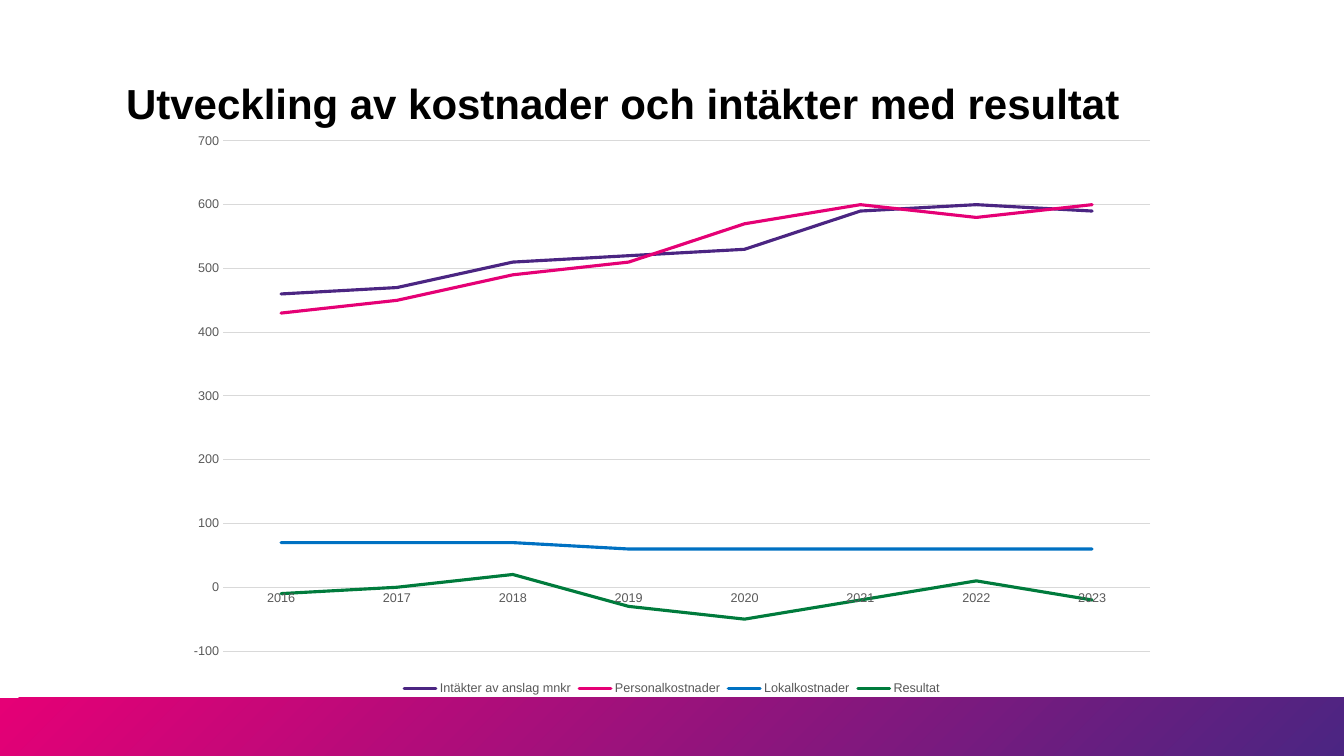
from dataclasses import dataclass

from pptx import Presentation
from pptx.chart.data import CategoryChartData
from pptx.dml.color import RGBColor
from pptx.enum.chart import XL_CHART_TYPE as ChartType
from pptx.enum.chart import XL_LEGEND_POSITION as LegendPosition
from pptx.enum.chart import XL_TICK_MARK as TickMark
from pptx.enum.shapes import MSO_SHAPE as Shape
from pptx.enum.text import MSO_ANCHOR as Anchor
from pptx.enum.text import MSO_AUTO_SIZE as AutoSize
from pptx.enum.text import PP_ALIGN as Align
from pptx.oxml.ns import qn
from pptx.util import Pt

TITLE = "Utveckling av kostnader och intäkter med resultat"
YEARS = [str(year) for year in range(2016, 2024)]
SERIES = [
    ("Intäkter av anslag mnkr", "4B2582", [460, 470, 510, 520, 530, 590, 600, 590]),
    ("Personalkostnader", "E50075", [430, 450, 490, 510, 570, 600, 580, 600]),
    ("Lokalkostnader", "0071C2", [70, 70, 70, 60, 60, 60, 60, 60]),
    ("Resultat", "007B3C", [-10, 0, 20, -30, -50, -20, 10, -20]),
]

SLIDE_SIZE = (1344, 756)
BAND_BOX = (0, 698, 1344, 58)
CHART_BOX = (174, 122, 996, 578)
TITLE_BOX = (116, 48, 1053, 115)
EMU_PER_PX = 914400 / 100.8


@dataclass(frozen=True)
class Theme:
    font: str = "Arial"
    ink: str = "000000"
    label: str = "595959"
    grid: str = "D9D9D9"
    band: tuple = ("E50076", "4B2582")
    title_size: float = 30
    chart_size: float = 10
    label_size: float = 9
    grid_width: float = 0.75
    series_width: float = 2.25


THEME = Theme()


def emu(lengths):
    return [round(length * EMU_PER_PX) for length in lengths]


def set_font(font, size, color, bold=False):
    font.name = THEME.font
    font.size = Pt(size)
    font.bold = bold
    font.color.rgb = RGBColor.from_string(color)


def set_line(line, color, width):
    line.color.rgb = RGBColor.from_string(color)
    line.width = Pt(width)


def add_band(page):
    band = page.shapes.add_shape(Shape.RECTANGLE, *emu(BAND_BOX))
    band.shadow.inherit = False
    band.line.fill.background()
    band.fill.gradient()
    band.fill.gradient_angle = 315
    for stop, color in zip(band.fill.gradient_stops, THEME.band):
        stop.color.rgb = RGBColor.from_string(color)


def round_line_ends(chart):
    for series in chart.element.iter(qn("c:ser")):
        series.find(qn("c:spPr")).find(qn("a:ln")).set("cap", "rnd")


def add_line_chart(page):
    data = CategoryChartData()
    data.categories = YEARS
    for name, _, values in SERIES:
        data.add_series(name, values)
    chart = page.shapes.add_chart(ChartType.LINE, *emu(CHART_BOX), data).chart
    set_font(chart.font, THEME.chart_size, THEME.ink)
    chart.has_title = False

    chart.has_legend = True
    chart.legend.position = LegendPosition.BOTTOM
    chart.legend.include_in_layout = False
    set_font(chart.legend.font, THEME.label_size, THEME.label)

    for axis in (chart.category_axis, chart.value_axis):
        axis.major_tick_mark = axis.minor_tick_mark = TickMark.NONE
        set_font(axis.tick_labels.font, THEME.label_size, THEME.label)
    set_line(chart.category_axis.format.line, THEME.grid, THEME.grid_width)
    values_axis = chart.value_axis
    values_axis.minimum_scale, values_axis.maximum_scale = -100, 700
    values_axis.major_unit = 100
    values_axis.format.line.fill.background()
    set_line(values_axis.major_gridlines.format.line, THEME.grid, THEME.grid_width)

    plot = chart.plots[0]
    plot.vary_by_categories = False
    for series, (_, color, _) in zip(plot.series, SERIES):
        series.smooth = False
        set_line(series.format.line, color, THEME.series_width)
    round_line_ends(chart)


def fill_title(page, text):
    title = page.shapes.title
    title.left, title.top, title.width, title.height = emu(TITLE_BOX)
    frame = title.text_frame
    frame.text = text
    frame.word_wrap = True
    frame.auto_size = AutoSize.NONE
    frame.vertical_anchor = Anchor.MIDDLE
    para = frame.paragraphs[0]
    para.alignment = Align.LEFT
    para.line_spacing = 0.9
    set_font(para.runs[0].font, THEME.title_size, THEME.ink, bold=True)
    # The title lies in front of the chart.
    title.element.getparent().append(title.element)


def main():
    deck = Presentation()
    deck.slide_width, deck.slide_height = emu(SLIDE_SIZE)
    page = deck.slides.add_slide(deck.slide_layouts[5])
    add_band(page)
    add_line_chart(page)
    fill_title(page, TITLE)
    deck.save("out.pptx")


if __name__ == "__main__":
    main()
